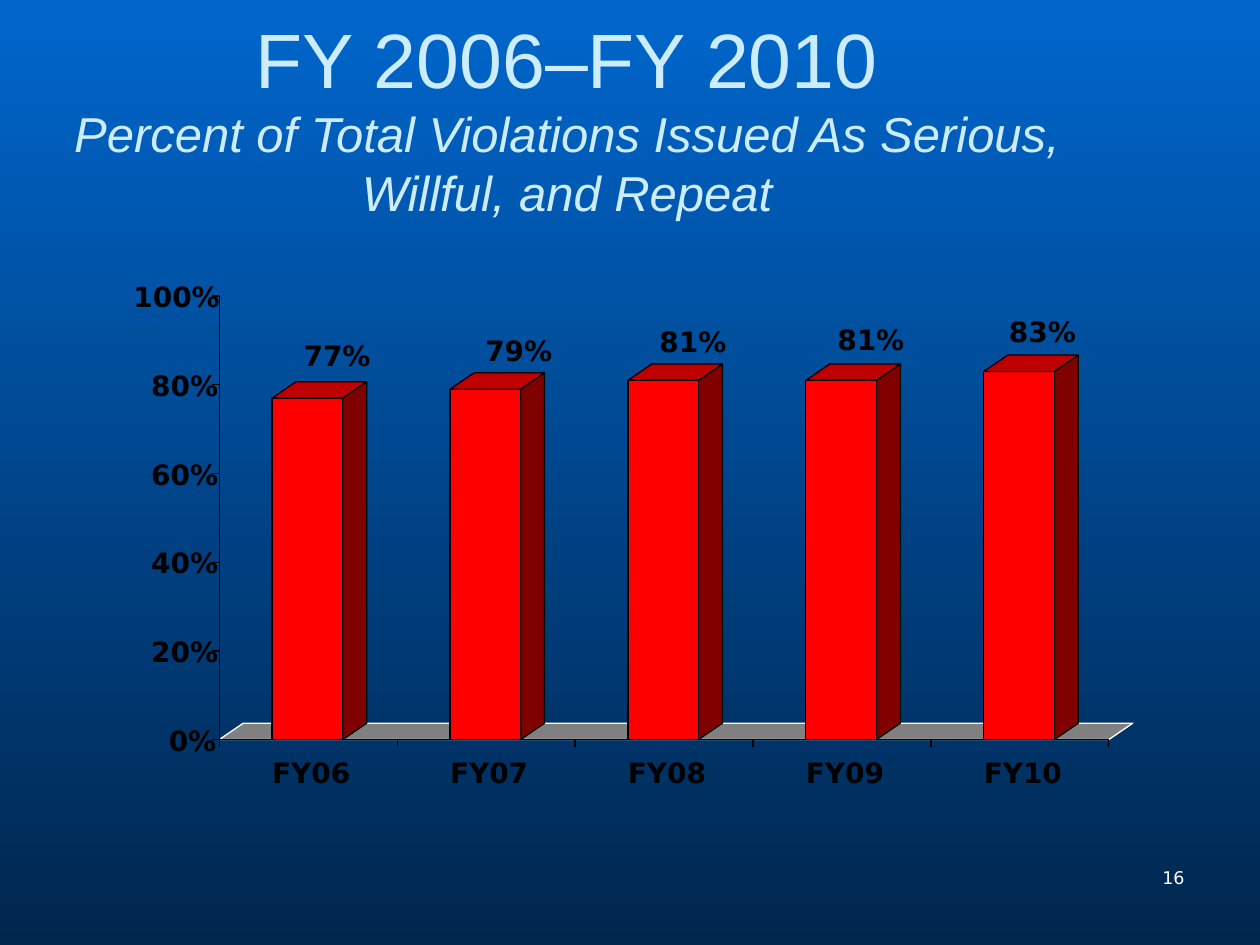
from lxml import etree
from pptx import Presentation
from pptx.dml.color import RGBColor
from pptx.enum.shapes import MSO_CONNECTOR, MSO_SHAPE
from pptx.enum.text import MSO_ANCHOR, MSO_AUTO_SIZE, PP_ALIGN
from pptx.oxml.ns import qn
from pptx.util import Inches, Pt

SKY = RGBColor(0x00, 0x66, 0xCC)
NAVY = RGBColor(0x00, 0x26, 0x4D)
PALE_BLUE = RGBColor(0xCC, 0xEC, 0xFF)
WHITE = RGBColor(0xFF, 0xFF, 0xFF)
BLACK = RGBColor(0x00, 0x00, 0x00)
GREY = RGBColor(0x80, 0x80, 0x80)
RED = RGBColor(0xFF, 0x00, 0x00)
TOP_RED = RGBColor(0xBF, 0x00, 0x00)
SIDE_RED = RGBColor(0x80, 0x00, 0x00)

TITLE = {"name": "Arial", "size": Pt(44), "color": PALE_BLUE}
SUBTITLE = {**TITLE, "size": Pt(28), "italic": True}
LABEL = {"name": "DejaVu Sans", "size": Pt(16), "bold": True, "color": BLACK}
NUMBER = {"name": "DejaVu Sans", "size": Pt(10), "color": WHITE}

BARS = [
    ("FY06", 77, 0.25, 0.47),
    ("FY07", 79, 0.28, 0.44),
    ("FY08", 81, 0.25, 0.44),
    ("FY09", 81, 0.25, 0.46),
    ("FY10", 83, 0.20, 0.45),
]
BAR_WIDTH, BAR_INSET = Inches(0.56), Inches(0.42)
DEPTH_X, DEPTH_Y = Inches(0.19), Inches(0.13)
TICK, LABEL_HEIGHT = Inches(0.06), Inches(0.33)


def add_span(para, text, style):
    """Add a run of text in the given style."""
    span = para.add_run()
    span.text = text
    for name, value in style.items():
        if name == "color":
            span.font.color.rgb = value
        else:
            setattr(span.font, name, value)


def add_label(shapes, left, top, width, text):
    """Add a bold chart label without margins."""
    box = shapes.add_textbox(left, top, width, LABEL_HEIGHT)
    layout = {"margin_left": 0, "margin_top": 0, "margin_right": 0, "margin_bottom": 0,
              "word_wrap": False, "auto_size": MSO_AUTO_SIZE.SHAPE_TO_FIT_TEXT}
    for name, value in layout.items():
        setattr(box.text_frame, name, value)
    add_span(box.text_frame.paragraphs[0], text, LABEL)


def add_line(shapes, left, top, right, bottom):
    """Add a thin black axis line or tick."""
    line = shapes.add_connector(MSO_CONNECTOR.STRAIGHT, left, top, right, bottom)
    line.line.color.rgb = BLACK
    line.line.width = Pt(0.75)
    etree.SubElement(line._element.spPr, qn("a:effectLst"))


def paint(shape, fill, outline):
    """Give a shape a flat fill and a thin outline."""
    shape.shadow.inherit = False
    shape.fill.solid()
    shape.fill.fore_color.rgb = fill
    shape.line.color.rgb = outline
    shape.line.width = Pt(0.75)


def add_face(shapes, points, fill, outline=BLACK):
    """Add a closed polygon for one face of a solid."""
    builder = shapes.build_freeform(*points[0])
    builder.add_line_segments(points[1:], close=True)
    paint(builder.convert_to_shape(), fill, outline)


def add_bar(shapes, left, top, width, height):
    """Draw a solid bar whose front face fills the given box."""
    right, base = left + width, top + height
    back, raised = right + DEPTH_X, top - DEPTH_Y
    add_face(shapes, [(right, base), (right, top), (back, raised),
                      (back, base - DEPTH_Y)], SIDE_RED)
    paint(shapes.add_shape(MSO_SHAPE.RECTANGLE, left, top, width, height), RED, BLACK)
    add_face(shapes, [(right, top), (back, raised), (left + DEPTH_X, raised),
                      (left, top)], TOP_RED)


def add_value_axis(shapes, left, top, height):
    """Draw the percent axis with its ticks and labels."""
    base = top + height
    add_line(shapes, left, base, left, top)
    for percent in range(0, 101, 20):
        level = base - height * percent // 100
        text = f"{percent}%"
        width = Inches(0.2 + 0.14 * len(text))
        add_line(shapes, left, level, left - TICK, level)
        add_label(shapes, left + Inches(0.08) - width, level - Inches(0.13), width, text)


def add_category_axis(shapes, left, base, width):
    """Draw the year axis with its ticks and labels."""
    add_line(shapes, left, base, left + width, base)
    for index in range(len(BARS) + 1):
        tick = left + width * index // len(BARS)
        add_line(shapes, tick, base, tick, base + TICK)
    for index, (year, *_) in enumerate(BARS):
        start = left + width * index // len(BARS) + BAR_INSET
        add_label(shapes, start, base + DEPTH_Y, Inches(0.72), year)


def add_bar_chart(page, left, top, width, height):
    """Draw the grouped solid bars and axes on the given plot box."""
    shapes = page.shapes.add_group_shape().shapes
    base, right = top + height, left + width
    add_face(shapes, [(left, base), (left + DEPTH_X, base - DEPTH_Y),
                      (right + DEPTH_X, base - DEPTH_Y), (right, base)], GREY, WHITE)
    for index, (_, percent, shift, rise) in enumerate(BARS):
        start = left + width * index // len(BARS) + BAR_INSET
        tall = height * percent // 100
        add_bar(shapes, start, base - tall, BAR_WIDTH, tall)
        add_label(shapes, start + Inches(shift), base - tall - Inches(rise),
                  Inches(0.62), f"{percent}%")
    add_value_axis(shapes, left, top, height)
    add_category_axis(shapes, left, base, width)


def add_title(page, left, top, width, height):
    """Add the centred title and its italic subtitle."""
    frame = page.shapes.add_textbox(left, top, width, height).text_frame
    frame.word_wrap = True
    frame.vertical_anchor = MSO_ANCHOR.MIDDLE
    para = frame.paragraphs[0]
    para.alignment = PP_ALIGN.CENTER
    add_span(para, "FY 2006–FY 2010", TITLE)
    para.add_line_break()
    add_span(para, "Percent of Total Violations Issued As Serious, Willful, and Repeat", SUBTITLE)


def add_page_number(page, left, top, width, height):
    """Add the right-aligned page number."""
    frame = page.shapes.add_textbox(left, top, width, height).text_frame
    frame.word_wrap = True
    para = frame.paragraphs[0]
    para.alignment = PP_ALIGN.RIGHT
    add_span(para, "16", NUMBER)


def add_background(page):
    """Fill the page with a gradient from top to bottom."""
    fill = page.background.fill
    fill.gradient()
    fill.gradient_angle = 270
    for stop, color in zip(fill.gradient_stops, (SKY, NAVY)):
        stop.color.rgb = color


def main():
    """Build the deck and save it."""
    deck = Presentation()
    deck.slide_width, deck.slide_height = Inches(10), Inches(7.5)
    page = deck.slides.add_slide(deck.slide_layouts[6])
    add_background(page)
    add_page_number(page, Inches(7.17), Inches(6.83), Inches(2.33), Inches(0.5))
    add_title(page, Inches(0), Inches(0.3), Inches(9), Inches(1.25))
    add_bar_chart(page, Inches(1.74), Inches(2.35), Inches(7.06), Inches(3.52))
    deck.save("out.pptx")


if __name__ == "__main__":
    main()
